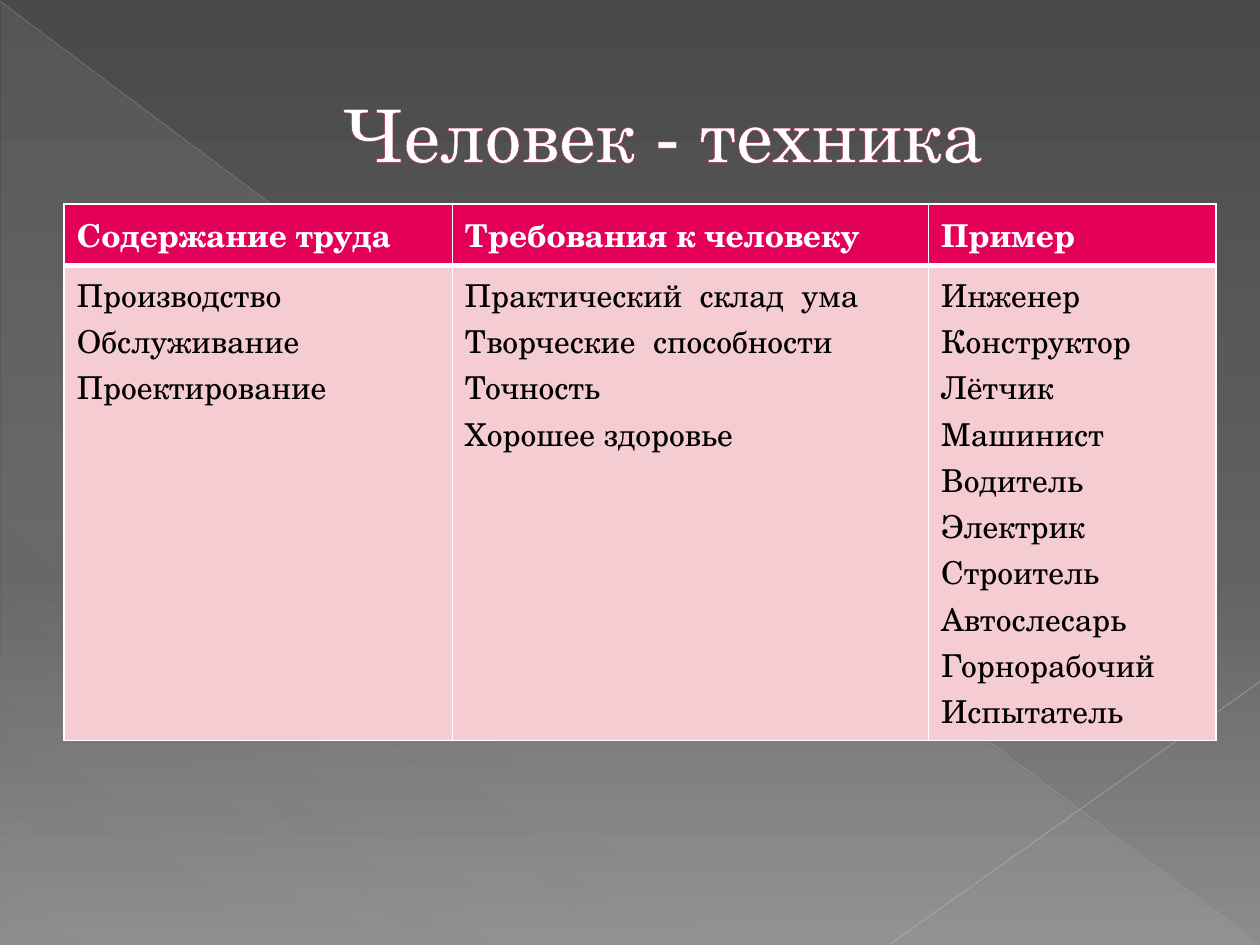
from lxml import etree
from pptx import Presentation
from pptx.dml.color import RGBColor
from pptx.enum import shapes, text
from pptx.oxml import parse_xml
from pptx.oxml.ns import nsdecls, qn
from pptx.util import Inches, Pt

FONT = "TeX Gyre Schola"
HEADERS = ["Содержание труда", "Требования к человеку", "Пример"]
CONTENTS = [
    ["Производство Обслуживание", "Проектирование"],
    ["Практический  склад  ума", "Творческие  способности", "Точность", "Хорошее здоровье"],
    ["Инженер", "Конструктор", "Лётчик", "Машинист", "Водитель",
     "Электрик", "Строитель", "Автослесарь", "Горнорабочий", "Испытатель"],
]


def color(value):
    return RGBColor.from_string(value)


def gradient(stops, angle):
    """Return a gradient fill from (position, colour, opacity) stops, in percent."""
    marks = "".join(
        f'<a:gs pos="{position * 1000}"><a:srgbClr val="{value}">'
        f'<a:alpha val="{opacity * 1000}"/></a:srgbClr></a:gs>'
        for position, value, opacity in stops)
    return parse_xml(f'<a:gradFill {nsdecls("a")} rotWithShape="1"><a:gsLst>{marks}</a:gsLst>'
                     f'<a:lin ang="{angle * 60000}" scaled="0"/></a:gradFill>')


def replace_fill(parent, fill):
    solid = parent.find(".//" + qn("a:solidFill"))
    solid.getparent().replace(solid, fill)


def outline(tag, value, width):
    return parse_xml(f'<a:{tag} {nsdecls("a")} w="{Pt(width)}"><a:solidFill>'
                     f'<a:srgbClr val="{value}"/></a:solidFill></a:{tag}>')


def style_span(span, size, value, bold=False):
    span.font.name = FONT
    span.font.size = Pt(size)
    span.font.bold = bold
    span.font.color.rgb = color(value)


def add_line(page, start, end, value, width, opacity):
    line = page.shapes.add_connector(shapes.MSO_CONNECTOR.STRAIGHT,
                                     *map(Inches, start + end))
    line.line.color.rgb = color(value)
    line.line.width = Pt(width)
    properties = line._element.spPr
    tint = properties.find(".//" + qn("a:srgbClr"))
    etree.SubElement(tint, qn("a:alpha"), val=str(opacity * 1000))
    etree.SubElement(properties, qn("a:effectLst"))


def add_backdrop(page, left, top, width, height):
    page.background.fill.solid()
    replace_fill(page._element.cSld, gradient(
        [(0, "4A4A4A", 100), (60, "626262", 100), (100, "8C8C8C", 100)], 90))

    triangle = page.shapes.add_shape(
        shapes.MSO_SHAPE.RIGHT_TRIANGLE, Inches(left + 0.01), Inches(top + 0.02),
        Inches(width - 0.02), Inches(height - 0.02))
    triangle.shadow.inherit = False
    triangle.fill.solid()
    triangle.line.fill.background()
    replace_fill(triangle._element.spPr, gradient(
        [(0, "D2D2D2", 10), (70, "D2D2D2", 8), (100, "D2D2D2", 1)], 133))

    right, bottom = left + width, top + height
    add_line(page, (left, top + 0.01), (right - 0.01, bottom - 0.01), "BFBFBF", 0.39, 35)
    add_line(page, (right, top + 5.41), (left + 7.07, bottom - 0.01), "C6C6C6", 0.47, 45)


def add_title(page, left, top, width, height):
    title = page.shapes.title
    page.shapes._spTree.append(title._element)  # in front of the backdrop
    title.left, title.top = Inches(left), Inches(top)
    title.width, title.height = Inches(width), Inches(height)
    frame = title.text_frame
    frame.text = "Человек - техника"
    frame.vertical_anchor = text.MSO_ANCHOR.MIDDLE
    para = frame.paragraphs[0]
    para.alignment = text.PP_ALIGN.CENTER
    para._p.get_or_add_pPr().set("marL", str(Inches(0.53)))
    span = para.runs[0]
    style_span(span, 42, "FFFFFF")
    span._r.get_or_add_rPr().insert(0, outline("ln", "B12761", 0.5))


def fill_cell(cell, lines, fill, value, bold, borders):
    cell.text_frame.text = "\n".join(lines)
    for para in cell.text_frame.paragraphs:
        style_span(para.runs[0], 18, value, bold)
    cell.fill.solid()
    cell.fill.fore_color.rgb = color(fill)
    properties = cell._tc.get_or_add_tcPr()
    for index, (side, width) in enumerate(zip("LRTB", borders)):
        properties.insert(index, outline("ln" + side, "FFFFFF", width))


def add_work_table(page, left, top, widths, heights):
    frame = page.shapes.add_table(len(heights), len(widths), Inches(left), Inches(top),
                                  Inches(sum(widths)), Inches(sum(heights)))
    table = frame.table
    for row, height in zip(table.rows, heights):
        row.height = Inches(height)
    for index, width in enumerate(widths):
        table.columns[index].width = Inches(width)
        fill_cell(table.cell(0, index), [HEADERS[index]], "E40059", "FFFFFF", True, (1, 1, 1, 3))
        fill_cell(table.cell(1, index), CONTENTS[index], "F5CCD1", "000000", False, (1, 1, 3, 1))


def main():
    deck = Presentation()
    deck.slide_width, deck.slide_height = Inches(10), Inches(7.5)
    page = deck.slides.add_slide(deck.slide_layouts.get_by_name("Title Only"))
    add_backdrop(page, 0, 0, 10, 7.5)
    add_title(page, 0.5, 0.29, 9, 1.53)
    add_work_table(page, 0.51, 1.62, [3.08, 3.78, 2.28], [0.38, 3.09])
    deck.save("out.pptx")


if __name__ == "__main__":
    main()
